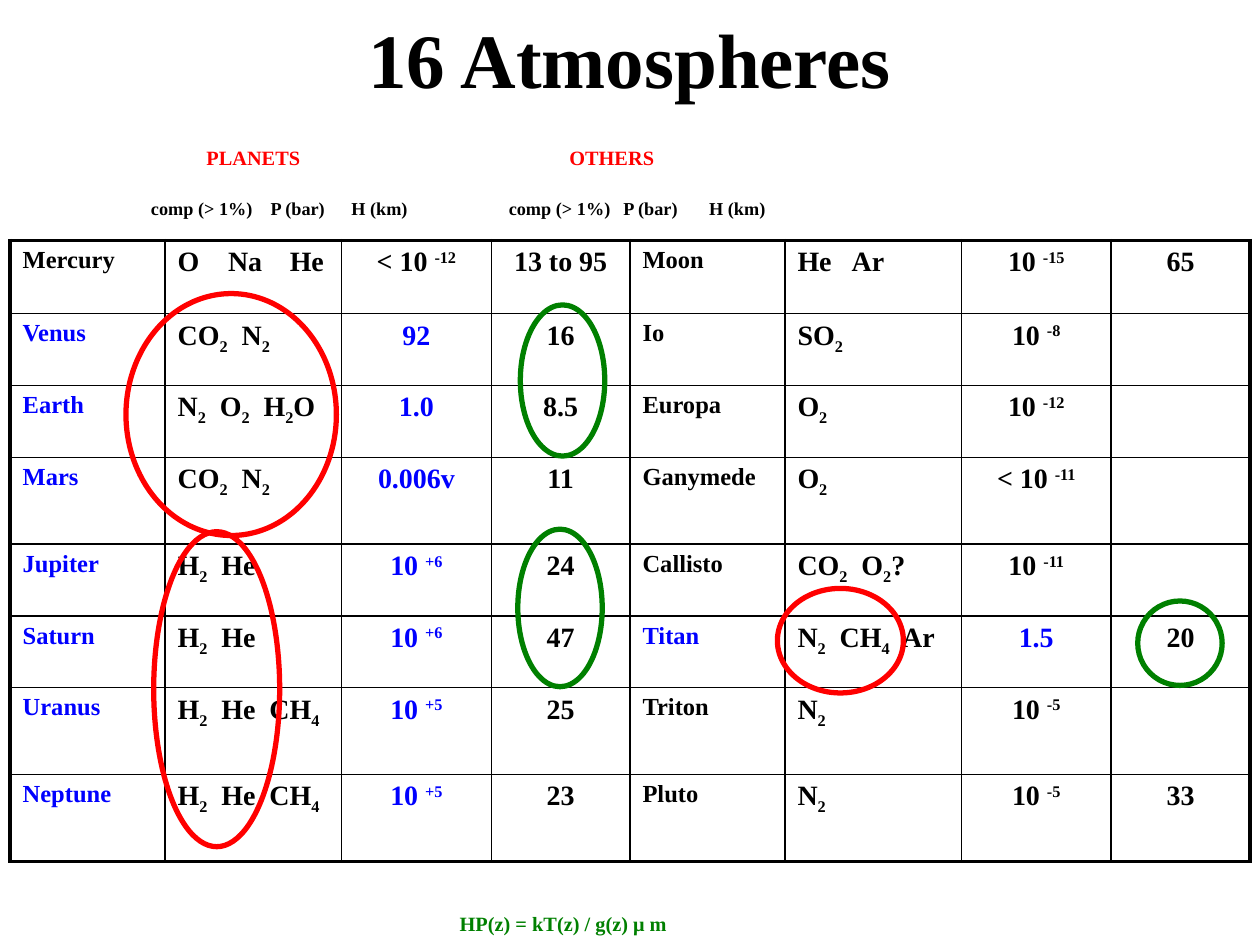
import pptx
import pptx.dml.color
import pptx.enum.shapes
import pptx.enum.text
import pptx.oxml
import pptx.oxml.ns
import pptx.util

Inches = pptx.util.Inches
Pt = pptx.util.Pt
ALIGN = pptx.enum.text.PP_ALIGN
ANCHOR = pptx.enum.text.MSO_ANCHOR

BLACK, BLUE, RED, GREEN = "000000", "0000FF", "FF0000", "008000"
SUBSCRIPT, SUPERSCRIPT = -25, 30

PLANETS = [
    ("Mercury", "O\tNa\tHe", "< 10 |-12", "13 to 95"),
    ("Venus", "CO|2|  N|2", "92", "16"),
    ("Earth", "N|2|  O|2|  H|2|O", "1.0", "8.5"),
    ("Mars", "CO|2|  N|2", "0.006v", "11"),
    ("Jupiter", "H|2|  He", "10 |+6", "24"),
    ("Saturn", "H|2|  He", "10 |+6", "47"),
    ("Uranus", "H|2|  He  CH|4", "10 |+5", "25"),
    ("Neptune", "H|2|  He  CH|4", "10 |+5", "23"),
]
OTHERS = [
    ("Moon", "He\tAr", "10 |-15", "65"),
    ("Io", "SO|2", "10 |-8", ""),
    ("Europa", "O|2", "10 |-12", ""),
    ("Ganymede", "O|2", "< 10 |-11", ""),
    ("Callisto", "CO|2|  O|2|?", "10 |-11", ""),
    ("Titan", "N|2|  CH|4|  Ar", "1.5", "20"),
    ("Triton", "N|2", "10 |-5", ""),
    ("Pluto", "N|2", "10 |-5", "33"),
]
THICK_ATMOSPHERES = {"Venus", "Earth", "Mars", "Jupiter", "Saturn",
                     "Uranus", "Neptune", "Titan"}
CELL_TABS = {"O\tNa\tHe": (0.4, 0.89), "He\tAr": (0.43,)}

COLUMN_FORMATS = [
    dict(size=14),
    dict(size=16, shift=SUBSCRIPT),
    dict(size=16, shift=SUPERSCRIPT, align=ALIGN.CENTER),
    dict(size=16, align=ALIGN.CENTER),
]
COLUMN_WIDTHS = [1.23, 1.4, 1.19, 1.1] * 2
ROW_HEIGHTS = [0.58, 0.57, 0.57, 0.69, 0.57, 0.57, 0.69, 0.69]

RINGS = [
    (1, 2.33, 1.67, 1.92, RED),
    (4.11, 4.2, 0.67, 1.25, GREEN),
    (9.03, 4.77, 0.67, 0.67, GREEN),
    (4.13, 2.42, 0.67, 1.2, GREEN),
    (1.22, 4.22, 1, 2.5, RED),
    (6.17, 4.67, 1, 0.83, RED),
]


def rgb(color):
    return pptx.dml.color.RGBColor.from_string(color)


def write(para, text, size=16, color=BLACK, align=ALIGN.LEFT, shift=0,
          tabs=(), before=0):
    para.alignment = align
    if tabs:
        stops = pptx.oxml.parse_xml(
            f'<a:tabLst {pptx.oxml.ns.nsdecls("a")}>'
            + "".join(f'<a:tab pos="{Inches(stop)}" algn="l"/>' for stop in tabs)
            + "</a:tabLst>")
        para._p.get_or_add_pPr().append(stops)
    para.space_before = Pt(before)
    for index, part in enumerate(text.split("|")):
        if not part:
            continue
        span = para.add_run()
        span.text = part
        span.font.name = "Times New Roman"
        span.font.size = Pt(size)
        span.font.bold = True
        span.font.color.rgb = rgb(color)
        if index % 2:
            span._r.get_or_add_rPr().set("baseline", str(shift * 1000))


def add_label(page, left, top, width, height):
    frame = page.shapes.add_textbox(
        Inches(left), Inches(top), Inches(width), Inches(height)).text_frame
    frame.word_wrap = True
    return frame


def set_borders(cell, widths):
    properties = cell._tc.get_or_add_tcPr()
    for position, (side, width) in enumerate(widths.items()):
        properties.insert(position, pptx.oxml.parse_xml(
            f'<a:{side} {pptx.oxml.ns.nsdecls("a")} w="{Pt(width)}">'
            f'<a:solidFill><a:srgbClr val="{BLACK}"/></a:solidFill></a:{side}>'))


def add_atmosphere_table(page):
    table = page.shapes.add_table(
        len(ROW_HEIGHTS), len(COLUMN_WIDTHS), Inches(0.08), Inches(1.91),
        Inches(sum(COLUMN_WIDTHS)), Inches(sum(ROW_HEIGHTS))).table
    table.first_row = False
    table.horz_banding = False
    for column, width in zip(table.columns, COLUMN_WIDTHS):
        column.width = Inches(width)
    for row, height in zip(table.rows, ROW_HEIGHTS):
        row.height = Inches(height)

    last_row, last_column = len(ROW_HEIGHTS) - 1, len(COLUMN_WIDTHS) - 1
    for r, bodies in enumerate(zip(PLANETS, OTHERS)):
        for c, text in enumerate(bodies[0] + bodies[1]):
            cell = table.cell(r, c)
            cell.fill.background()
            set_borders(cell, {
                "lnL": 2.25 if c == 0 else 1,
                "lnR": 2.25 if c == last_column else 1,
                "lnT": 2.25 if r == 0 else 1,
                "lnB": 2.25 if r == last_row else 1,
            })
            body, field = divmod(c, len(COLUMN_FORMATS))
            thick = bodies[body][0] in THICK_ATMOSPHERES
            write(cell.text_frame.paragraphs[0], text,
                  color=BLUE if thick and field in (0, 2) else BLACK,
                  tabs=CELL_TABS.get(text, ()), **COLUMN_FORMATS[field])


def add_ring(page, left, top, width, height, color):
    ring = page.shapes.add_shape(
        pptx.enum.shapes.MSO_SHAPE.OVAL,
        Inches(left), Inches(top), Inches(width), Inches(height))
    ring.shadow.inherit = False
    ring.fill.background()
    ring.line.color.rgb = rgb(color)
    ring.line.width = Pt(3)


def main():
    deck = pptx.Presentation()
    deck.slide_width, deck.slide_height = Inches(10), Inches(7.5)
    page = deck.slides.add_slide(deck.slide_layouts[5])

    title = page.shapes.title
    title.left, title.top = Inches(0.75), Inches(0)
    title.width, title.height = Inches(8.5), Inches(0.92)
    title.text_frame.vertical_anchor = ANCHOR.MIDDLE
    write(title.text_frame.paragraphs[0], "16 Atmospheres", size=44,
          align=ALIGN.CENTER)

    add_atmosphere_table(page)

    headings = add_label(page, 0.9, 0.92, 9.14, 0.77)
    write(headings.paragraphs[0], "|\tPLANETS\tOTHERS", size=20, color=RED,
          shift=SUBSCRIPT, tabs=(0.64, 3.52))
    write(headings.add_paragraph(),
          "|\tcomp (> 1%)\tP (bar)\tH (km)\tcomp (> 1%)\tP (bar)\tH (km)",
          size=18, shift=SUBSCRIPT, before=3.6,
          tabs=(0.2, 1.15, 1.79, 3.04, 3.95, 4.63))

    formula = add_label(page, 3.55, 7, 3, 0.44)
    write(formula.paragraphs[0], "|HP(z) = kT(z) / g(z) μ m", size=20,
          color=GREEN, shift=SUBSCRIPT)

    for ring in RINGS:
        add_ring(page, *ring)

    deck.save("out.pptx")


if __name__ == "__main__":
    main()
